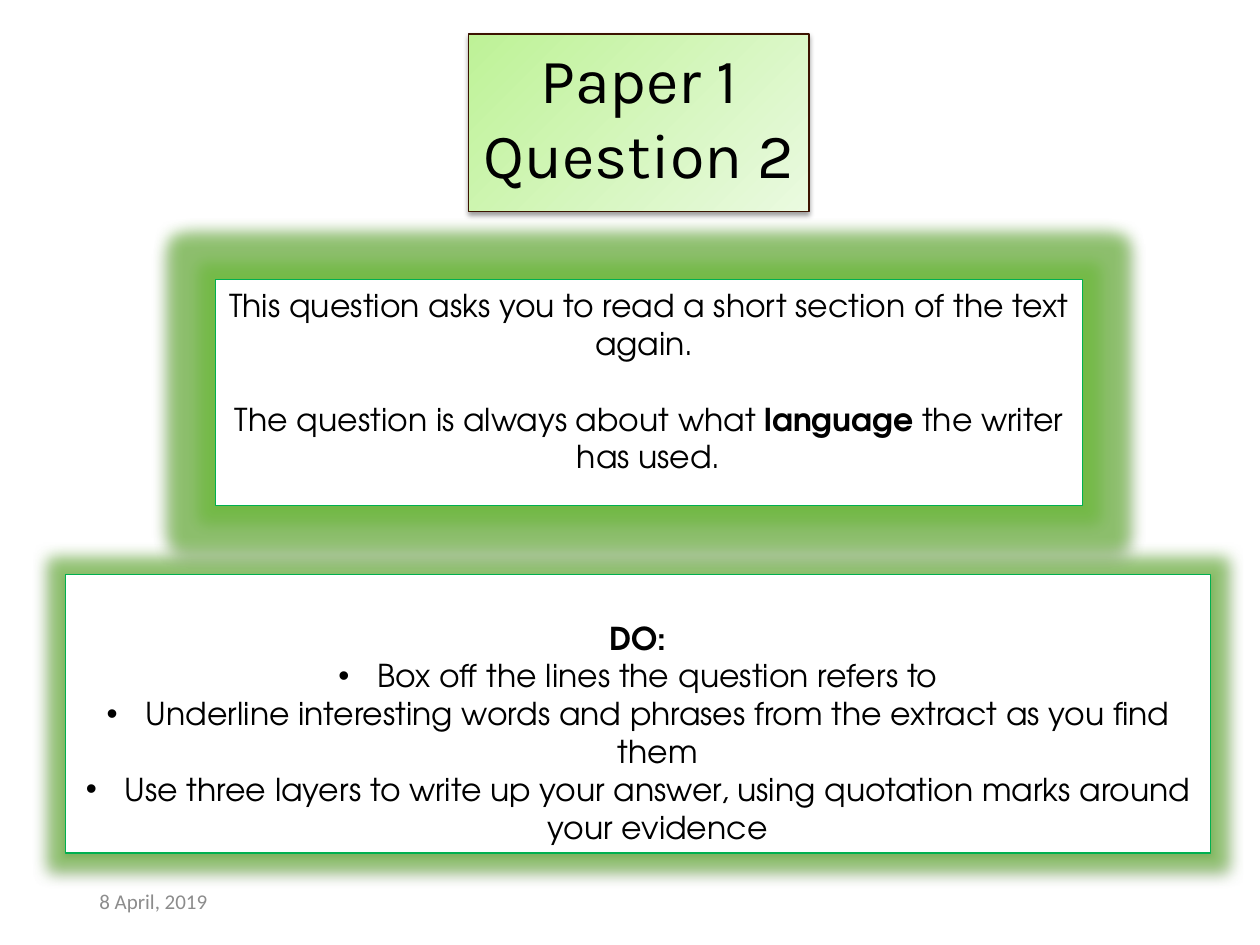
from lxml import etree
from pptx import Presentation
from pptx.dml import color
from pptx.enum import shapes, text
from pptx.oxml import ns
from pptx.util import Inches, Pt

COLORS = {
    "ink": "000000",
    "title_start": "BEF297",
    "title_end": "EAFAE0",
    "title_line": "3C1301",
    "panel": "FFFFFF",
    "panel_line": "00B050",
    "glow": "6ABD35",
    "date": "8C8C8C",
}
TITLE_FONT, BODY_FONT, DATE_FONT = "Karla", "TeX Gyre Adventor", "Calibri"


def rgb(name):
    return color.RGBColor.from_string(COLORS[name])


def add_effect(effects, tag, name, alpha, **settings):
    effect = etree.SubElement(effects, ns.qn(tag), settings)
    tint = etree.SubElement(effect, ns.qn("a:srgbClr"), val=COLORS[name])
    etree.SubElement(tint, ns.qn("a:alpha"), val=str(alpha * 1000))


def frame_shape(shape, box, line_name, glowing):
    shape.left, shape.top, shape.width, shape.height = map(Inches, box)
    shape.line.color.rgb = rgb(line_name)
    shape.line.width = Pt(0.75)
    shape.shadow.inherit = False
    effects = shape._element.spPr.find(ns.qn("a:effectLst"))
    if glowing:
        add_effect(effects, "a:glow", "glow", 60, rad=str(Pt(18)))
    add_effect(effects, "a:outerShdw", "ink", 38, blurRad=str(Pt(3.1)),
               dist=str(Pt(1.6)), dir="5400000", rotWithShape="0")
    frame = shape.text_frame
    frame.word_wrap = True
    frame.auto_size = text.MSO_AUTO_SIZE.NONE
    frame.vertical_anchor = text.MSO_ANCHOR.TOP
    return frame


def write_line(frame, index, runs, font, size, bulleted=False, before=0):
    para = frame.paragraphs[0] if index == 0 else frame.add_paragraph()
    para.alignment = text.PP_ALIGN.CENTER
    para.space_before = Pt(before)
    props = para._p.get_or_add_pPr()
    indent = Inches(0.31) if bulleted else 0
    props.set("marL", str(indent))
    props.set("indent", str(-indent))
    if bulleted:
        etree.SubElement(props, ns.qn("a:buFont"), typeface="Arial")
        etree.SubElement(props, ns.qn("a:buChar"), char="•")
    else:
        etree.SubElement(props, ns.qn("a:buNone"))
    para.font.name = font
    para.font.size = Pt(size)
    para.font.color.rgb = rgb("ink")
    for words, bold in runs:
        span = para.add_run()
        span.text = words
        if bold:
            span.font.bold = True


def place_title(page, box):
    title = page.shapes.title
    title.fill.gradient()
    title.fill.gradient_angle = 315
    for stop, name in zip(title.fill.gradient_stops, ("title_start", "title_end")):
        stop.color.rgb = rgb(name)
    frame = frame_shape(title, box, "title_line", glowing=False)
    for index, words in enumerate(("Paper 1", "Question 2")):
        write_line(frame, index, [(words, False)], TITLE_FONT, 36)


def place_summary(page, box):
    panel = page.shapes.add_shape(shapes.MSO_SHAPE.RECTANGLE, *map(Inches, box))
    panel.fill.solid()
    panel.fill.fore_color.rgb = rgb("panel")
    frame = frame_shape(panel, box, "panel_line", glowing=True)
    write_line(frame, 0, [
        ("This question asks you to read a short section of the text again. ", False),
    ], BODY_FONT, 18)
    write_line(frame, 1, [
        ("The question is always about what ", False),
        ("language ", True),
        ("the writer has used.", False),
    ], BODY_FONT, 18, before=21.7)


def place_advice(page, box):
    panel = page.placeholders[1]
    panel.fill.solid()
    panel.fill.fore_color.rgb = rgb("panel")
    frame = frame_shape(panel, box, "panel_line", glowing=True)
    frame.margin_top = Inches(0.35)
    write_line(frame, 0, [("DO:", True)], BODY_FONT, 18)
    steps = (
        "Box off the lines the question refers to",
        "Underline interesting words and phrases from the extract as you find them",
        "Use three layers to write up your answer, using quotation marks around your evidence",
    )
    for index, step in enumerate(steps, 1):
        write_line(frame, index, [(step, False)], BODY_FONT, 18, bulleted=True)


def place_date(page, box):
    frame = page.shapes.add_textbox(*map(Inches, box)).text_frame
    frame.word_wrap = True
    frame.vertical_anchor = text.MSO_ANCHOR.MIDDLE
    para = frame.paragraphs[0]
    para.text = "8 April, 2019"
    para.font.name = DATE_FONT
    para.font.size = Pt(12)
    para.font.color.rgb = rgb("date")


def main():
    deck = Presentation()
    deck.slide_width, deck.slide_height = Inches(10), Inches(7.5)
    page = deck.slides.add_slide(deck.slide_layouts[1])
    place_title(page, (3.72, 0.27, 2.7, 1.41))
    place_summary(page, (1.71, 2.22, 6.88, 1.79))
    place_advice(page, (0.52, 4.56, 9.09, 2.21))
    place_date(page, (0.69, 6.95, 2.25, 0.4))
    deck.save("out.pptx")


if __name__ == "__main__":
    main()
